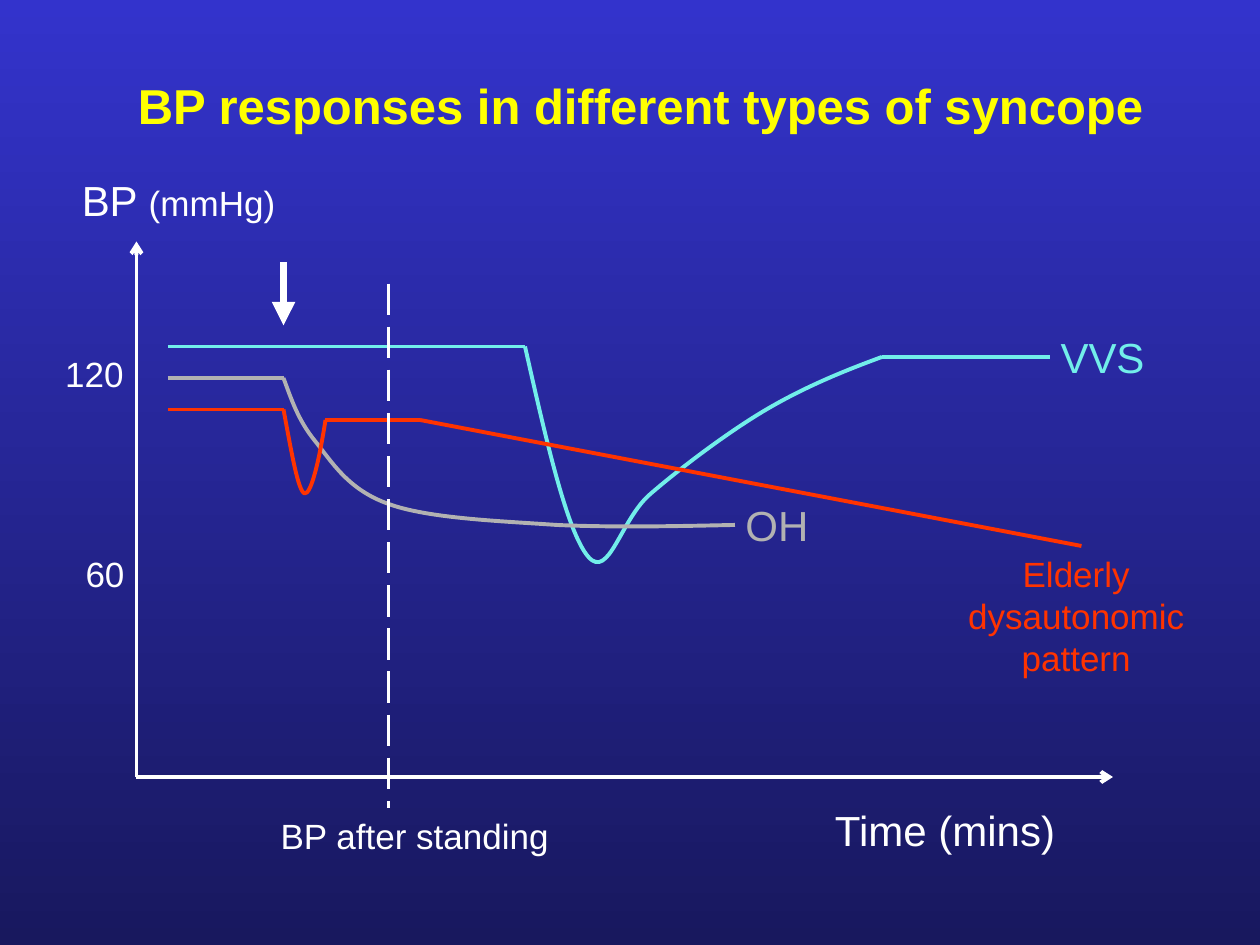
from dataclasses import dataclass
from itertools import chain

from lxml.etree import SubElement
from pptx import Presentation
from pptx.dml.color import RGBColor as Color
from pptx.enum.dml import MSO_LINE as Dash
from pptx.enum.shapes import MSO_CONNECTOR as Link
from pptx.enum.text import (MSO_ANCHOR as Anchor, MSO_AUTO_SIZE as Fit,
                            PP_ALIGN as Align)
from pptx.oxml.ns import qn
from pptx.util import Pt

PX = 9525


@dataclass(frozen=True)
class Theme:
    font: str = "Arial"
    top: str = "3333CC"
    base: str = "18185E"
    title: str = "FFFF00"
    white: str = "FFFFFF"
    cyan: str = "72EEEA"
    gray: str = "B2B2B2"
    red: str = "FF3300"
    head: int = 28
    large: int = 24
    small: int = 20
    thin: float = 2.25
    thick: float = 4.5


def apply(item, values):
    for name, value in values.items():
        setattr(item, name, value)


class Painter:
    def __init__(self, slide, theme):
        self.slide = slide
        self.shapes = slide.shapes
        self.theme = theme

    def back(self):
        fill = self.slide.background.fill
        fill.gradient()
        fill.gradient_angle = 270
        tones = (self.theme.top, self.theme.base)
        for place, (stop, tone) in enumerate(zip(fill.gradient_stops, tones)):
            stop.position = place
            stop.color.rgb = Color.from_string(tone)

    def text(self, box, runs, color, anchor=Anchor.TOP, bold=False,
             fit=Fit.SHAPE_TO_FIT_TEXT):
        frame = self.shapes.add_textbox(*(PX * n for n in box)).text_frame
        apply(frame, {"word_wrap": True, "vertical_anchor": anchor,
                      "auto_size": fit})
        para = frame.paragraphs[0]
        para.alignment = Align.CENTER
        for words, size in runs:
            run = para.add_run()
            run.text = words
            apply(run.font, {"name": self.theme.font, "size": Pt(size),
                             "bold": bold})
            run.font.color.rgb = Color.from_string(color)

    def stroke(self, line, color, width):
        line.color.rgb = Color.from_string(color)
        line.width = Pt(width)

    def line(self, ends, color, width=None, dash=None, **tips):
        link = self.shapes.add_connector(
            Link.STRAIGHT, *(PX * n for n in ends))
        self.stroke(link.line, color, width or self.theme.thin)
        if dash:
            link.line.dash_style = dash
        for end, kind in tips.items():
            SubElement(link.line._get_or_add_ln(), qn(f"a:{end}End"),
                       type=kind)
        SubElement(link._element.spPr, qn("a:effectLst"))

    def curve(self, start, curves, color):
        maker = self.shapes.build_freeform(*start, scale=PX)
        maker.add_line_segments(chain(*curves), close=False)
        shape = maker.convert_to_shape()
        shape.shadow.inherit = False
        shape.fill.background()
        self.stroke(shape.line, color, self.theme.thin)
        steps = list(shape._element.iter(qn("a:lnTo")))
        for first in range(0, len(steps), 3):
            trio = steps[first:first + 3]
            bend = SubElement(trio[0].getparent(), qn("a:cubicBezTo"))
            for step in trio:
                bend.append(step[0])
                step.getparent().remove(step)


def main():
    deck = Presentation()
    apply(deck, {"slide_width": 960 * PX, "slide_height": 720 * PX})
    look = Theme()
    pen = Painter(deck.slides.add_slide(deck.slide_layouts[6]), look)
    pen.back()
    pen.text((80, 40, 816, 80),
             [("BP responses in different types of syncope", look.head)],
             look.title, Anchor.MIDDLE, True, Fit.NONE)

    pen.line((104, 184, 104, 592), look.white, head="arrow")
    pen.line((104, 592, 848, 592), look.white, tail="arrow")
    pen.line((216, 200, 216, 248), look.white, look.thick, tail="triangle")

    traces = (
        (look.cyan, [(128, 264, 400, 264), (672, 272, 800, 272)], (400, 264), [
            ((416, 335), (432, 405), (448, 424)),
            ((464, 443), (473, 395), (496, 376)),
            ((518, 357), (555, 329), (584, 312)),
            ((613, 295), (642, 283), (672, 272))]),
        (look.gray, [(128, 288, 216, 288)], (216, 288), [
            ((222, 304), (227, 320), (240, 336)),
            ((253, 352), (265, 373), (296, 384)),
            ((326, 395), (380, 397), (424, 400)),
            ((468, 402), (514, 401), (560, 400))]),
        (look.red, [(128, 312, 216, 312), (248, 320, 320, 320),
                    (320, 320, 824, 416)], (216, 312), [
            ((222, 344), (227, 374), (232, 376)),
            ((237, 377), (243, 352), (248, 320))]),
    )
    for color, lines, start, curves in traces:
        for ends in lines:
            pen.line(ends, color)
        pen.curve(start, curves, color)
    pen.line((296, 216, 296, 616), look.white, dash=Dash.LONG_DASH)

    labels = (
        ((24, 128, 224, 48), [("BP ", look.large), ("(mmHg)", look.small)],
         look.white),
        ((40, 264, 64, 41), [("120", look.small)], look.white),
        ((48, 416, 64, 41), [("60", look.small)], look.white),
        ((608, 608, 224, 48), [("Time (mins)", look.large)], look.white),
        ((152, 616, 328, 41), [("BP after standing", look.small)], look.white),
        ((776, 248, 128, 48), [("VVS", look.large)], look.cyan),
        ((544, 376, 96, 48), [("OH", look.large)], look.gray),
        ((720, 416, 200, 106), [("Elderly dysautonomic pattern", look.small)],
         look.red),
    )
    for label in labels:
        pen.text(*label)
    deck.save("out.pptx")


if __name__ == "__main__":
    main()
